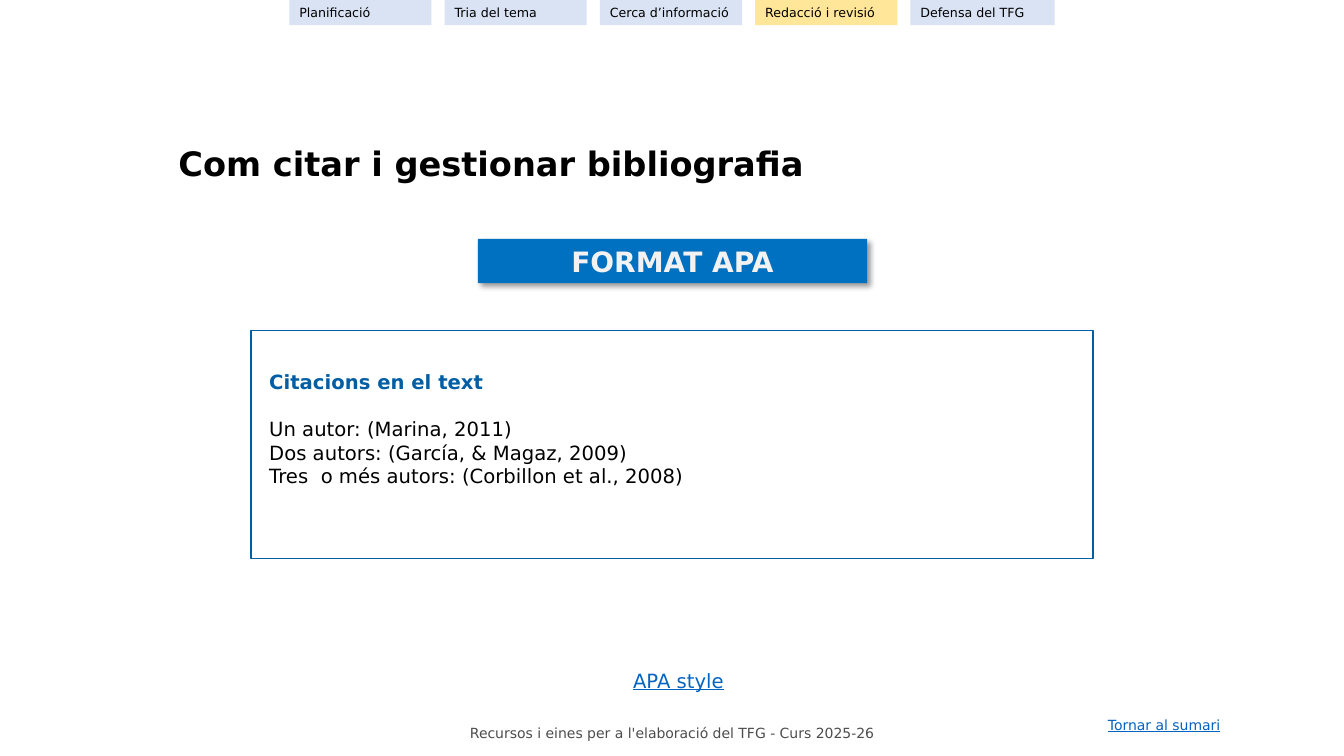
import pptx
import pptx.util
import pptx.dml.color
import pptx.enum.shapes
import pptx.enum.text
import lxml.etree
from pptx.util import Inches

RGBColor = pptx.dml.color.RGBColor
ALIGN = pptx.enum.text.PP_ALIGN
ANCHOR = pptx.enum.text.MSO_ANCHOR
RECTANGLE = pptx.enum.shapes.MSO_SHAPE.RECTANGLE
DRAWING = "http://schemas.openxmlformats.org/drawingml/2006/main"

FONT = "DejaVu Sans"
BLACK = RGBColor(0x00, 0x00, 0x00)
GREY = RGBColor(0x4D, 0x4D, 0x4D)
LIGHT_GREY = RGBColor(0xF2, 0xF2, 0xF2)
LINK_BLUE = RGBColor(0x05, 0x63, 0xC1)
DEEP_BLUE = RGBColor(0x00, 0x5E, 0xA4)
BANNER_BLUE = RGBColor(0x00, 0x70, 0xC0)
TAB_BLUE = RGBColor(0xDA, 0xE3, 0xF3)
TAB_YELLOW = RGBColor(0xFF, 0xE6, 0x99)


def write(p, text, size=14, color=BLACK, bold=False, underline=False,
          align=ALIGN.LEFT, before=0):
    r = p.add_run()
    r.text = text
    r.font.name = FONT
    r.font.size = pptx.util.Pt(size)
    r.font.color.rgb = color
    r.font.bold = bold
    r.font.underline = underline
    p.alignment = align
    p.space_before = pptx.util.Pt(before)


def place(sp, left, top, width, height):
    sp.left, sp.top = Inches(left), Inches(top)
    sp.width, sp.height = Inches(width), Inches(height)
    tf = sp.text_frame
    tf.auto_size = pptx.enum.text.MSO_AUTO_SIZE.NONE
    tf.word_wrap = True
    return tf


prs = pptx.Presentation()
prs.slide_width = Inches(13.33)
prs.slide_height = Inches(7.5)
s = prs.slides.add_slide(prs.slide_layouts[1])

tf = place(s.shapes.title, 1.67, 1.37, 8.35, 0.5)
tf.vertical_anchor = ANCHOR.MIDDLE
write(tf.paragraphs[0], "Com citar i gestionar bibliografia", size=24, bold=True)

citations = [
    ("Citacions en el text", {"color": DEEP_BLUE, "bold": True}),
    ("Un autor: (Marina, 2011)", {"before": 17}),
    ("Dos autors: (García, & Magaz, 2009)", {}),
    ("Tres  o més autors: (Corbillon et al., 2008)", {}),
]
tf = place(s.placeholders[1], 2.57, 3.62, 8.03, 1.28)
tf.vertical_anchor = ANCHOR.TOP
for i, (text, style) in enumerate(citations):
    p = tf.add_paragraph() if i else tf.paragraphs[0]
    pPr = p._p.get_or_add_pPr()
    pPr.set("marL", "0")
    pPr.set("indent", "0")
    lxml.etree.SubElement(pPr, f"{{{DRAWING}}}buNone")
    write(p, text, **style)

frame = s.shapes.add_shape(RECTANGLE, Inches(2.49), Inches(3.28), Inches(8.35), Inches(2.26))
frame.shadow.inherit = False
frame.fill.background()
frame.line.color.rgb = DEEP_BLUE
frame.line.width = pptx.util.Pt(1)

labels = [
    ("Recursos i eines per a l'elaboració del TFG - Curs 2025-26", (3.75, 7.14, 5.83, 0.27),
     {"size": 10, "color": GREY, "align": ALIGN.CENTER}),
    ("Tornar al sumari", (10.89, 7.06, 1.36, 0.27),
     {"size": 10, "color": LINK_BLUE, "underline": True}),
    ("APA style", (6.18, 6.59, 1.12, 0.34),
     {"color": LINK_BLUE, "underline": True}),
]
for text, box, style in labels:
    sp = s.shapes.add_textbox(0, 0, 0, 0)
    tf = place(sp, *box)
    tf.word_wrap = style.get("align") == ALIGN.CENTER
    write(tf.paragraphs[0], text, **style)

blocks = [
    ("FORMAT APA", (4.74, 2.37, 3.86, 0.44), BANNER_BLUE,
     {"size": 20, "color": LIGHT_GREY, "bold": True, "align": ALIGN.CENTER}),
]
tabs = [
    ("Planificació", 1.41, TAB_BLUE),
    ("Tria del tema", 1.41, TAB_BLUE),
    ("Cerca d’informació", 1.41, TAB_BLUE),
    ("Redacció i revisió", 1.41, TAB_YELLOW),
    ("Defensa del TFG", 1.43, TAB_BLUE),
]
for i, (text, width, fill) in enumerate(tabs):
    blocks.append((text, (2.87 + 1.54 * i, 0, width, 0.25), fill, {"size": 9}))

for text, box, fill, style in blocks:
    sp = s.shapes.add_shape(RECTANGLE, 0, 0, 0, 0)
    sp.shadow.inherit = False
    sp.fill.solid()
    sp.fill.fore_color.rgb = fill
    sp.line.fill.background()
    tf = place(sp, *box)
    tf.vertical_anchor = ANCHOR.MIDDLE
    write(tf.paragraphs[0], text, **style)
    if fill == BANNER_BLUE:
        effects = sp._element.spPr.find(f"{{{DRAWING}}}effectLst")
        effects.append(lxml.etree.fromstring(
            f'<a:outerShdw xmlns:a="{DRAWING}" blurRad="50800" dist="38100" dir="2700000"'
            ' algn="tl" rotWithShape="0"><a:srgbClr val="000000"><a:alpha val="40000"/>'
            '</a:srgbClr></a:outerShdw>'))

prs.save("out.pptx")
